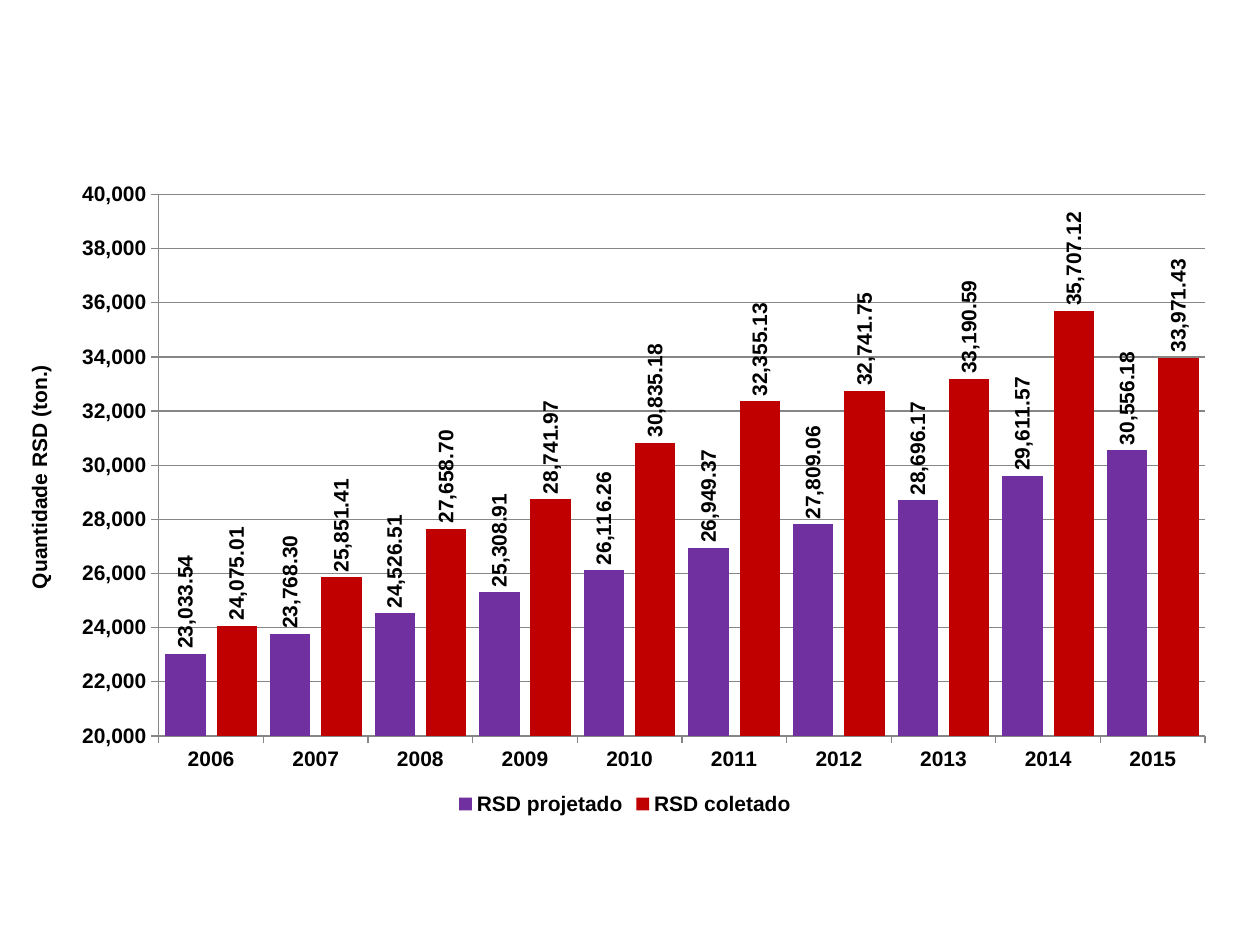
from dataclasses import dataclass

from pptx import Presentation
from pptx.chart.data import CategoryChartData
from pptx.dml.color import RGBColor
from pptx.enum.chart import XL_CHART_TYPE as ChartType
from pptx.enum.chart import XL_LABEL_POSITION as LabelPosition
from pptx.enum.chart import XL_LEGEND_POSITION as LegendPosition
from pptx.enum.chart import XL_TICK_MARK as TickMark
from pptx.oxml import parse_xml
from pptx.oxml.ns import nsdecls, qn
from pptx.util import Inches, Pt

COLORS = {
    "text": "000000",
    "line": "868686",
    "projected": "7030A0",
    "collected": "C00000",
}
YEARS = [str(year) for year in range(2006, 2016)]


@dataclass(frozen=True)
class WasteSeries:
    name: str
    color: str
    tons: tuple[float, ...]


SERIES = (
    WasteSeries("RSD projetado", "projected", (
        23033.54, 23768.30, 24526.51, 25308.91, 26116.26,
        26949.37, 27809.06, 28696.17, 29611.57, 30556.18)),
    WasteSeries("RSD coletado", "collected", (
        24075.01, 25851.41, 27658.70, 28741.97, 30835.18,
        32355.13, 32741.75, 33190.59, 35707.12, 33971.43)),
)


def rgb(name: str) -> RGBColor:
    return RGBColor.from_string(COLORS[name])


def style_font(font) -> None:
    font.name = "Arial"
    font.size = Pt(12)
    font.bold = True
    font.color.rgb = rgb("text")


def style_axis(axis) -> None:
    axis.major_tick_mark = TickMark.OUTSIDE
    axis.minor_tick_mark = TickMark.NONE
    axis.format.line.color.rgb = rgb("line")
    axis.format.line.width = Pt(0.75)
    style_font(axis.tick_labels.font)


def style_series(series, waste: WasteSeries) -> None:
    series.format.fill.solid()
    series.format.fill.fore_color.rgb = rgb(waste.color)
    series.invert_if_negative = False
    labels = series.data_labels
    labels.show_value = True
    labels.number_format = "#,##0.00"
    labels.number_format_is_linked = False
    labels.position = LabelPosition.OUTSIDE_END
    style_font(labels.font)
    # Turn the labels to read upwards
    body = labels._element.find(qn("c:txPr")).find(qn("a:bodyPr"))
    body.set("rot", "-5400000")
    body.set("vert", "horz")


def place_plot(chart, x: float, y: float, width: float, height: float) -> None:
    """Set the inner plot area as fractions of the chart."""
    plot_area = chart._chartSpace.chart.plotArea
    for layout in plot_area.findall(qn("c:layout")):
        plot_area.remove(layout)
    sizes = "".join(
        f'<c:{tag} val="{value}"/>'
        for tag, value in zip("xywh", (x, y, width, height)))
    plot_area.insert(0, parse_xml(
        f'<c:layout {nsdecls("c")}><c:manualLayout>'
        '<c:layoutTarget val="inner"/><c:xMode val="edge"/><c:yMode val="edge"/>'
        f'{sizes}</c:manualLayout></c:layout>'))


def add_waste_chart(slide) -> None:
    data = CategoryChartData(number_format="#,##0.00")
    data.categories = YEARS
    for waste in SERIES:
        data.add_series(waste.name, waste.tons)
    chart = slide.shapes.add_chart(
        ChartType.COLUMN_CLUSTERED, Inches(0.04), Inches(1.37),
        Inches(9.84), Inches(5.14), data).chart
    style_font(chart.font)
    chart.has_title = False

    # Columns
    plot = chart.plots[0]
    plot.vary_by_categories = False
    plot.gap_width = 32
    plot.overlap = -27
    for series, waste in zip(plot.series, SERIES):
        style_series(series, waste)

    # Axes
    style_axis(chart.category_axis)
    value_axis = chart.value_axis
    style_axis(value_axis)
    value_axis.minimum_scale = 20000
    value_axis.maximum_scale = 40000
    value_axis.major_unit = 2000
    value_axis.tick_labels.number_format = "#,##0"
    value_axis.tick_labels.number_format_is_linked = False
    value_axis.has_major_gridlines = True
    value_axis.major_gridlines.format.line.color.rgb = rgb("line")
    value_axis.major_gridlines.format.line.width = Pt(0.75)
    title_frame = value_axis.axis_title.text_frame
    title_frame.text = "Quantidade RSD (ton.)"
    style_font(title_frame.paragraphs[0].font)

    # Legend and plot area
    chart.has_legend = True
    chart.legend.position = LegendPosition.BOTTOM
    chart.legend.include_in_layout = False
    style_font(chart.legend.font)
    place_plot(chart, 0.124, 0.034, 0.844, 0.836)


def main() -> None:
    presentation = Presentation()
    presentation.slide_width = Inches(10)
    presentation.slide_height = Inches(7.5)
    slide = presentation.slides.add_slide(presentation.slide_layouts[6])
    add_waste_chart(slide)
    presentation.save("out.pptx")


if __name__ == "__main__":
    main()
